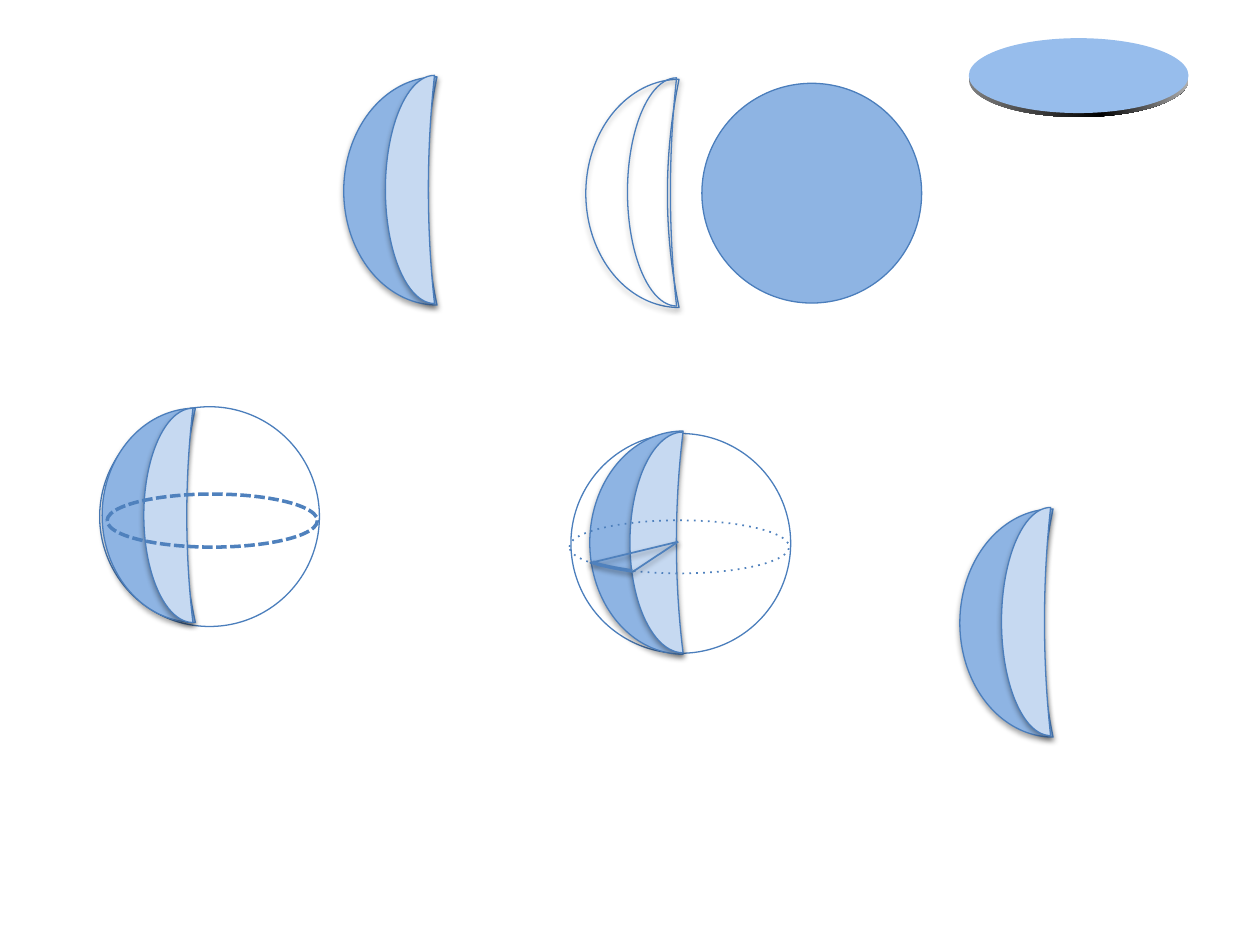
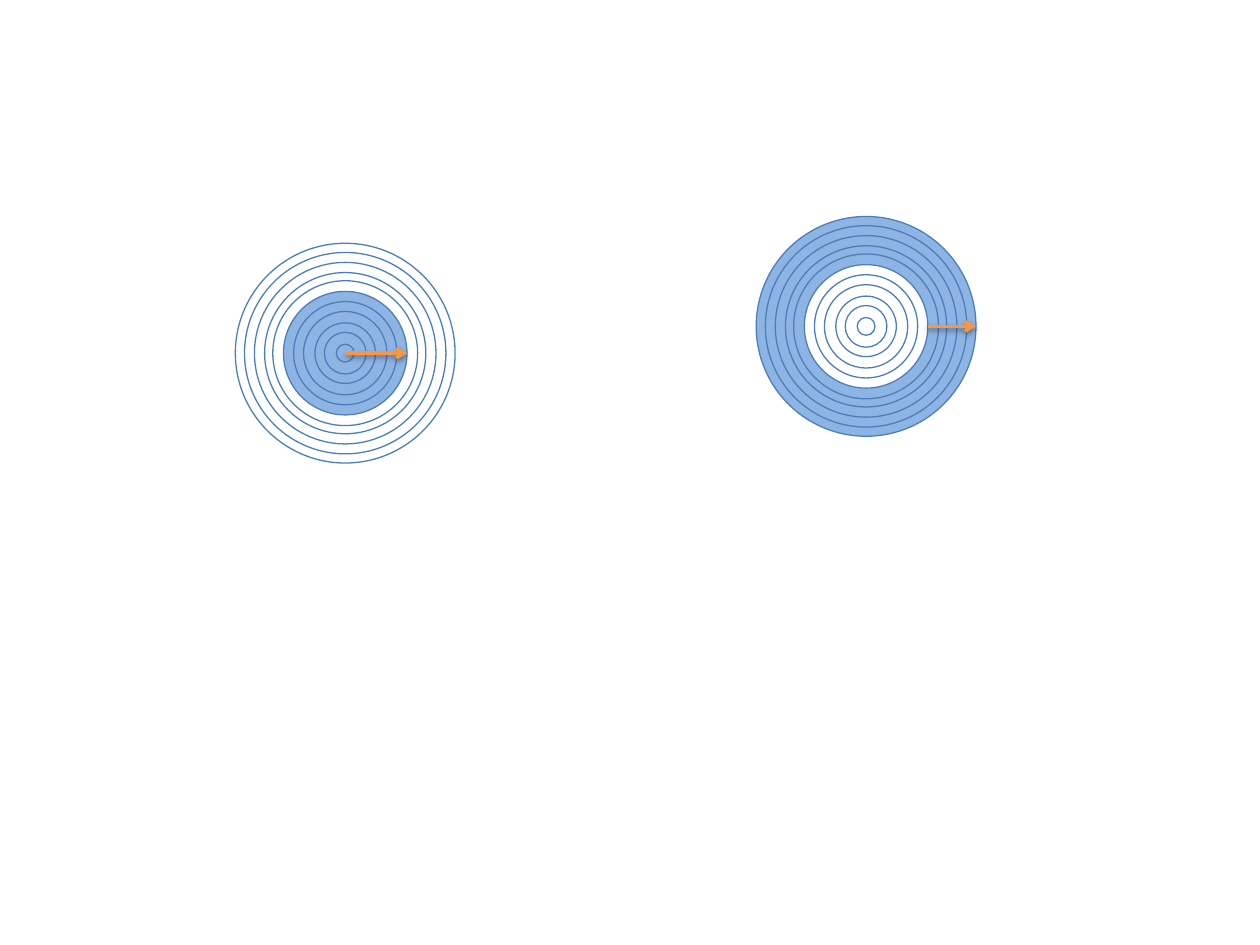
"""Draw sphere wedges on one slide and concentric shells on the next."""

from dataclasses import dataclass
from typing import Optional

from lxml import etree
from pptx import Presentation
from pptx import util as u
from pptx.dml.color import RGBColor
from pptx.enum import shapes as kinds
from pptx.oxml.ns import qn

WHITE = RGBColor(0xFF, 0xFF, 0xFF)
MID_BLUE = RGBColor(0x8E, 0xB4, 0xE3)
PALE_BLUE = RGBColor(0xC6, 0xD9, 0xF1)
LIT_BLUE = RGBColor(0x97, 0xBD, 0xEC)
OUTLINE = RGBColor(0x4B, 0x7E, 0xBC)
ACCENT = RGBColor(0x4F, 0x81, 0xBD)
ORANGE = RGBColor(0xF7, 0x96, 0x46)
RIM_LEFT = RGBColor(0x80, 0x80, 0x80)
RIM_RIGHT = RGBColor(0xB0, 0xB0, 0xB0)
BLACK = RGBColor(0, 0, 0)

SPHERE = 4.43
SHELL_DIAMETERS = (4.43, 4.06, 3.66, 3.25, 2.92, 2.49, 2.08, 1.68, 1.22, 0.84, 0.36)
CORE_INDEX = 5
MOON_CURVE = 0.875


@dataclass(frozen=True)
class Shadow:
    """A soft shadow falling straight down."""

    opacity: int
    distance: float
    blur: float = 3.1


SHAPE_SHADOW = Shadow(35, 1.8)
LINE_SHADOW = Shadow(38, 1.6)


@dataclass(frozen=True)
class Frame:
    """A rectangle in centimetres."""

    left: float
    top: float
    width: float
    height: float

    def lengths(self) -> tuple:
        """Return the four sides as lengths."""
        return tuple(u.Cm(side) for side in (self.left, self.top, self.width, self.height))


@dataclass(frozen=True)
class Stroke:
    """Colour, width in points and dash of a line."""

    color: RGBColor = OUTLINE
    width: float = 0.75
    dash: Optional[str] = None


@dataclass(frozen=True)
class Wedge:
    """A sphere wedge made of an outer face and an inner face."""

    left: float
    top: float
    height: float = 4.6
    inner_dx: float = 0.84
    inner_dy: float = -0.03
    inner_width: float = 0.99
    inner_height: float = 4.6
    outer_fill: Optional[RGBColor] = MID_BLUE
    inner_fill: Optional[RGBColor] = PALE_BLUE
    grouped: bool = True


@dataclass(frozen=True)
class Shells:
    """Concentric circles with an arrow along one radius."""

    x: float
    y: float
    outer_fill: RGBColor
    core_fill: RGBColor
    arrow_from: float
    arrow_to: float


HOLLOW_WEDGE = Wedge(11.81, 1.6, outer_fill=None, inner_fill=None, grouped=False)
LEFT_WEDGE = Wedge(2.06, 8.23, height=4.32, inner_dy=0, inner_height=4.32)
TOP_WEDGE = Wedge(6.93, 1.55, grouped=False)
MIDDLE_WEDGE = Wedge(11.89, 8.69, height=4.5, inner_dx=0.81, inner_dy=0.02,
                     inner_width=1.07, inner_height=4.45)
RIGHT_WEDGE = Wedge(19.35, 10.26)

CORE_RADIUS = SHELL_DIAMETERS[CORE_INDEX] / 2
SHELL_SETS = (
    Shells(6.96, 7.12, WHITE, MID_BLUE, 0, CORE_RADIUS),
    Shells(17.46, 6.58, MID_BLUE, WHITE, CORE_RADIUS, SPHERE / 2),
)


def apply_stroke(item, stroke: Stroke) -> None:
    """Set the line of a shape or connector."""
    item.line.color.rgb = stroke.color
    item.line.width = u.Pt(stroke.width)
    if stroke.dash:
        line = item._element.spPr.find(qn("a:ln"))
        etree.SubElement(line, qn("a:prstDash"), val=stroke.dash)


def apply_shadow(item, shadow: Optional[Shadow]) -> None:
    """Replace the theme shadow with the given one, or with none."""
    effects = etree.SubElement(item._element.spPr, qn("a:effectLst"))
    if shadow:
        outer = etree.SubElement(
            effects, qn("a:outerShdw"), blurRad=str(u.Pt(shadow.blur)),
            dist=str(u.Pt(shadow.distance)), dir="5400000", rotWithShape="0")
        color = etree.SubElement(outer, qn("a:srgbClr"), val=str(BLACK))
        etree.SubElement(color, qn("a:alpha"), val=str(shadow.opacity * 1000))


def add_figure(holder, kind, frame: Frame, fill: Optional[RGBColor] = None,
               stroke: Optional[Stroke] = Stroke(), shadow: Optional[Shadow] = None):
    """Add a preset shape to a slide or group."""
    figure = holder.shapes.add_shape(kind, *frame.lengths())
    if fill is None:
        figure.fill.background()
    else:
        figure.fill.solid()
        figure.fill.fore_color.rgb = fill
    if stroke is None:
        figure.line.fill.background()
    else:
        apply_stroke(figure, stroke)
    apply_shadow(figure, shadow)
    return figure


def add_ellipse(slide, frame: Frame, fill: Optional[RGBColor] = None,
                stroke: Optional[Stroke] = Stroke()):
    """Add a flat ellipse."""
    return add_figure(slide, kinds.MSO_SHAPE.OVAL, frame, fill, stroke)


def add_segment(slide, start: tuple, end: tuple, stroke: Stroke, arrow: bool = False) -> None:
    """Add a shadowed straight line, with an arrowhead if asked."""
    points = [u.Cm(value) for value in (*start, *end)]
    segment = slide.shapes.add_connector(kinds.MSO_CONNECTOR.STRAIGHT, *points)
    apply_stroke(segment, stroke)
    if arrow:
        line = segment._element.spPr.find(qn("a:ln"))
        etree.SubElement(line, qn("a:tailEnd"), type="arrow")
    apply_shadow(segment, LINE_SHADOW)


def add_wedge(slide, wedge: Wedge) -> None:
    """Add both faces of a wedge."""
    holder = slide.shapes.add_group_shape() if wedge.grouped else slide
    faces = (
        (Frame(wedge.left, wedge.top, 1.88, wedge.height), wedge.outer_fill),
        (Frame(wedge.left + wedge.inner_dx, wedge.top + wedge.inner_dy,
               wedge.inner_width, wedge.inner_height), wedge.inner_fill),
    )
    for frame, fill in faces:
        moon = add_figure(holder, kinds.MSO_SHAPE.MOON, frame, fill, shadow=SHAPE_SHADOW)
        moon.adjustments[0] = MOON_CURVE


def add_tilted_disc(slide) -> None:
    """Add a thin disc seen from the side, with a shaded rim."""
    rim = add_ellipse(slide, Frame(19.53, 0.85, SPHERE, 1.51), BLACK, None)
    rim.fill.gradient()
    rim.fill.gradient_angle = 0
    stops = rim.fill.gradient_stops
    for stop, color, position in zip(stops, (RIM_LEFT, RIM_RIGHT), (0, 1)):
        stop.color.rgb = color
        stop.position = position
    middle = etree.Element(qn("a:gs"), pos="60000")
    etree.SubElement(middle, qn("a:srgbClr"), val=str(BLACK))
    rim._element.spPr.find(".//" + qn("a:gsLst")).insert(1, middle)
    add_ellipse(slide, Frame(19.53, 0.77, SPHERE, 1.51), LIT_BLUE, None)


def add_shells(slide, shells: Shells) -> None:
    """Add concentric circles from the largest inwards, then the arrow."""
    for index, diameter in enumerate(SHELL_DIAMETERS):
        fill = shells.outer_fill if index < CORE_INDEX else shells.core_fill
        radius = diameter / 2
        add_ellipse(slide, Frame(shells.x - radius, shells.y - radius, diameter, diameter), fill)
    add_segment(slide, (shells.x + shells.arrow_from, shells.y),
                (shells.x + shells.arrow_to, shells.y), Stroke(ORANGE, 2), arrow=True)


def draw_wedges(slide) -> None:
    """Draw the slide of spheres, discs and wedges."""
    add_ellipse(slide, Frame(2.01, 8.2, SPHERE, SPHERE))
    add_wedge(slide, HOLLOW_WEDGE)
    add_ellipse(slide, Frame(14.15, 1.68, SPHERE, SPHERE), MID_BLUE)
    add_tilted_disc(slide)
    add_wedge(slide, LEFT_WEDGE)
    add_wedge(slide, TOP_WEDGE)
    add_ellipse(slide, Frame(2.16, 9.96, 4.24, 1.07), stroke=Stroke(ACCENT, 2, "sysDash"))
    add_ellipse(slide, Frame(11.51, 8.74, SPHERE, SPHERE))
    add_wedge(slide, MIDDLE_WEDGE)
    add_ellipse(slide, Frame(11.48, 10.49, SPHERE, 1.07), stroke=Stroke(ACCENT, 1, "dot"))
    add_wedge(slide, RIGHT_WEDGE)
    for start in ((11.89, 11.35), (12.75, 11.53)):
        add_segment(slide, start, (13.67, 10.92), Stroke(ACCENT, 1))
    arc = add_figure(slide, kinds.MSO_SHAPE.ARC, Frame(11.94, 11.38, 1.63, 0.13),
                     stroke=Stroke(ACCENT, 2), shadow=LINE_SHADOW)
    arc.rotation = 188.6


def main() -> None:
    """Build and save the deck."""
    deck = Presentation()
    deck.slide_width, deck.slide_height = u.Cm(25.4), u.Cm(19.05)
    blank = deck.slide_layouts[6]
    draw_wedges(deck.slides.add_slide(blank))
    shell_slide = deck.slides.add_slide(blank)
    for shells in SHELL_SETS:
        add_shells(shell_slide, shells)
    deck.save("out.pptx")


if __name__ == "__main__":
    main()
